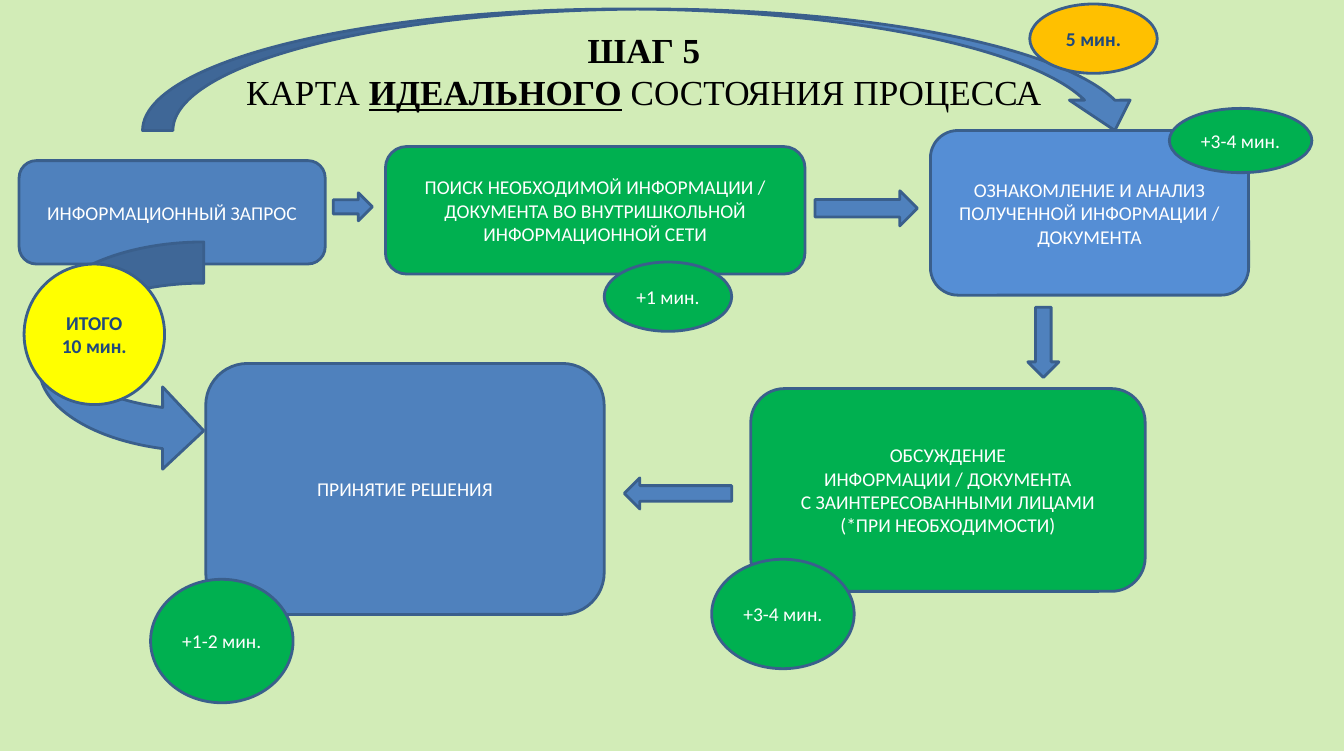
from pptx import Presentation
from pptx.dml.color import RGBColor
from pptx.enum.shapes import MSO_SHAPE as Shape
from pptx.enum.text import MSO_ANCHOR as Anchor, PP_ALIGN as Align
from pptx.util import Inches, Pt

BLUE, LIGHT_BLUE, NAVY, OUTLINE = "4F81BD", "558ED5", "1F497D", "3A5F8C"
GREEN, YELLOW, ORANGE = "00B050", "FFFF00", "FFC000"
WHITE, BLACK, BACKGROUND = "FFFFFF", "000000", "D2ECB7"

STEPS = [
    ((0.19, 1.6, 3.05, 1.03), BLUE, "ИНФОРМАЦИОННЫЙ ЗАПРОС", None),
    ((3.84, 1.46, 4.18, 1.27), GREEN,
     "ПОИСК НЕОБХОДИМОЙ ИНФОРМАЦИИ / ДОКУМЕНТА ВО ВНУТРИШКОЛЬНОЙ "
     "ИНФОРМАЦИОННОЙ СЕТИ",
     ((2.18, 1.15, 1.27, 0.69), "+1 мин.")),
    ((9.27, 1.3, 3.17, 1.64), LIGHT_BLUE,
     "ОЗНАКОМЛЕНИЕ И АНАЛИЗ ПОЛУЧЕННОЙ ИНФОРМАЦИИ / ДОКУМЕНТА",
     ((2.38, -0.22, 1.42, 0.64), "+3-4 мин.")),
    ((7.48, 3.87, 3.93, 2.02), GREEN,
     "ОБСУЖДЕНИЕ\nИНФОРМАЦИИ / ДОКУМЕНТА\nС ЗАИНТЕРЕСОВАННЫМИ ЛИЦАМИ\n"
     "(*ПРИ НЕОБХОДИМОСТИ)",
     ((-0.39, 1.7, 1.42, 1.09), "+3-4 мин.")),
    ((2.05, 3.62, 3.97, 2.5), BLUE, "ПРИНЯТИЕ РЕШЕНИЯ",
     ((-0.55, 2.15, 1.42, 1.23), "+1-2 мин.")),
]

FLOW_ARROWS = [
    (Shape.RIGHT_ARROW, (3.32, 1.92, 0.39, 0.28)),
    (Shape.RIGHT_ARROW, (8.12, 1.9, 1.02, 0.35)),
    (Shape.DOWN_ARROW, (10.24, 3.06, 0.31, 0.7)),
    (Shape.LEFT_ARROW, (6.22, 4.76, 1.07, 0.31)),
]

LOOPS = [
    (Shape.CURVED_RIGHT_ARROW, (0.39, 2.41, 1.64, 2.29),
     (-0.15, 0.22, 1.4, 1.4), YELLOW, "ИТОГО\n10 мин."),
    (Shape.CURVED_DOWN_ARROW, (1.42, 0.09, 9.99, 1.21),
     (8.84, -0.05, 1.27, 0.69), ORANGE, "5 мин."),
]


def color(value):
    return RGBColor.from_string(value)


def inside(box, part):
    return box[0] + part[0], box[1] + part[1], part[2], part[3]


def format_run(run, size, font_name, font_color, bold=False):
    run.font.size = Pt(size)
    run.font.name = font_name
    run.font.color.rgb = color(font_color)
    run.font.bold = bold


def draw_shape(slide, kind, box, fill, text="", font_color=WHITE, bold=False):
    shape = slide.shapes.add_shape(kind, *map(Inches, box))
    shape.shadow.inherit = False
    shape.fill.solid()
    shape.fill.fore_color.rgb = color(fill)
    shape.line.color.rgb = color(OUTLINE)
    shape.line.width = Pt(2)
    if text:
        text_frame = shape.text_frame
        text_frame.word_wrap = True
        text_frame.vertical_anchor = Anchor.MIDDLE
        text_frame.text = text
        for paragraph in text_frame.paragraphs:
            paragraph.alignment = Align.CENTER
            for run in paragraph.runs:
                format_run(run, 14, "Calibri", font_color, bold)


def draw_title(slide, box):
    text_frame = slide.shapes.add_textbox(*map(Inches, box)).text_frame
    text_frame.word_wrap = True
    text_frame.vertical_anchor = Anchor.MIDDLE
    lines = [
        [("ШАГ 5", True, False)],
        [("КАРТА ", False, False), ("ИДЕАЛЬНОГО", True, True),
         (" СОСТОЯНИЯ ПРОЦЕССА", False, False)],
    ]
    for index, line in enumerate(lines):
        paragraph = text_frame.add_paragraph() if index else text_frame.paragraphs[0]
        paragraph.alignment = Align.CENTER
        for text, bold, underline in line:
            run = paragraph.add_run()
            run.text = text
            format_run(run, 25.2, "Times New Roman", BLACK, bold)
            run.font.underline = underline


def draw_step(slide, box, fill, text, duration):
    draw_shape(slide, Shape.ROUNDED_RECTANGLE, box, fill, text)
    if duration:
        badge, label = duration
        draw_shape(slide, Shape.OVAL, inside(box, badge), GREEN, label)


def draw_loop(slide, kind, box, badge, fill, label):
    draw_shape(slide, kind, box, BLUE)
    draw_shape(slide, Shape.OVAL, inside(box, badge), fill, label, NAVY, True)


def main():
    presentation = Presentation()
    presentation.slide_width = Inches(13.39)
    presentation.slide_height = Inches(7.48)
    slide = presentation.slides.add_slide(presentation.slide_layouts[6])
    slide.background.fill.solid()
    slide.background.fill.fore_color.rgb = color(BACKGROUND)

    draw_title(slide, (0.39, 0.23, 12.05, 0.95))
    for box, fill, text, duration in STEPS:
        draw_step(slide, box, fill, text, duration)
    for kind, box in FLOW_ARROWS:
        draw_shape(slide, kind, box, BLUE)
    for kind, box, badge, fill, label in LOOPS:
        draw_loop(slide, kind, box, badge, fill, label)

    presentation.save("out.pptx")


if __name__ == "__main__":
    main()
